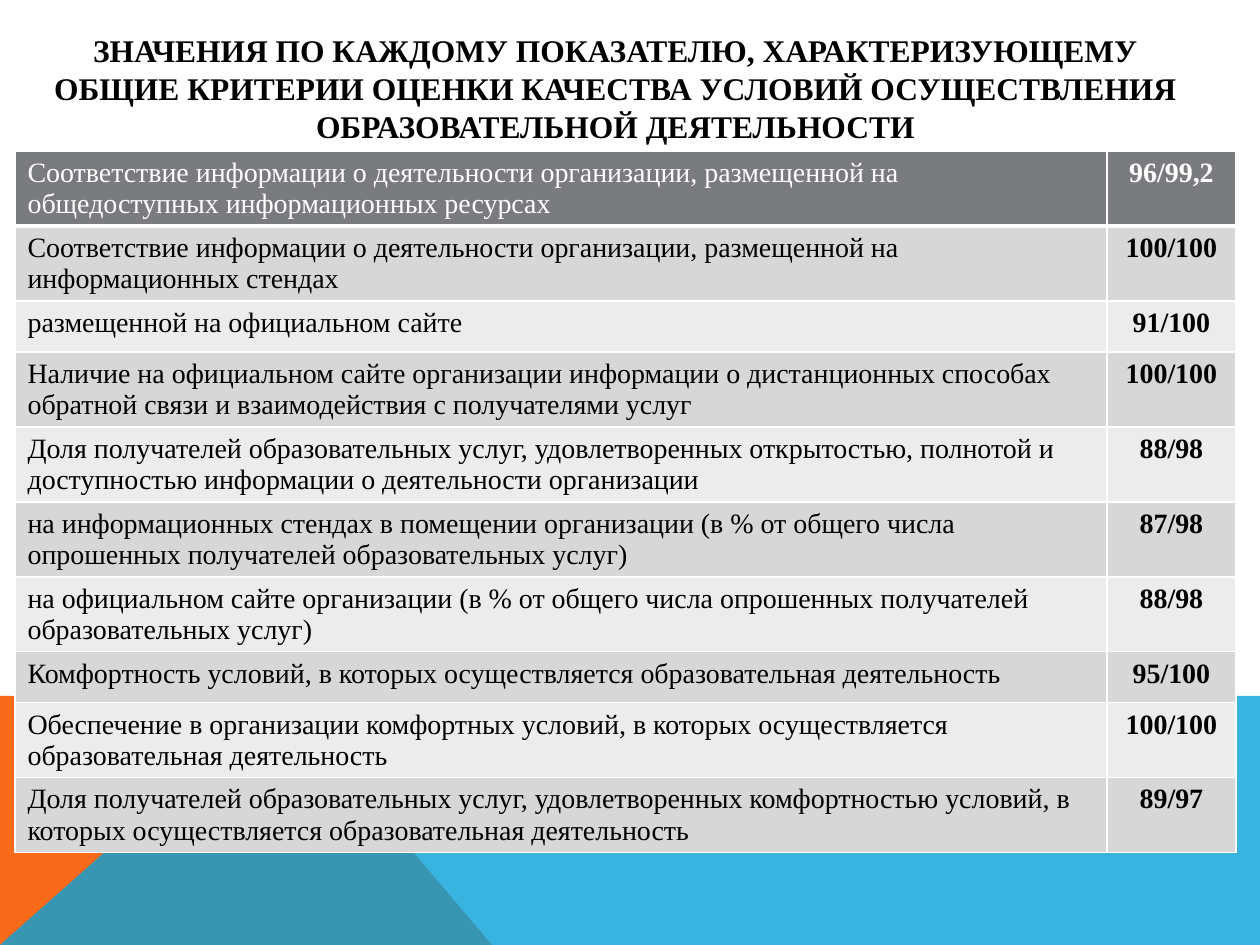
from lxml import etree
from pptx import Presentation
from pptx.dml.color import RGBColor
from pptx.enum.text import MSO_ANCHOR, PP_ALIGN
from pptx.oxml.ns import qn
from pptx.util import Emu, Pt

CENTER, LEFT = PP_ALIGN.CENTER, PP_ALIGN.LEFT
MIDDLE = MSO_ANCHOR.MIDDLE
PX = 914400 / 126
FONT = "Times New Roman"


def px(n):
    return Emu(round(n * PX))


def rgb(value):
    return RGBColor.from_string(value)


prs = Presentation()
prs.slide_width, prs.slide_height = px(1260), px(945)
s = prs.slides.add_slide(prs.slide_layouts[6])

# Bottom decoration: orange corner under a translucent blue band
bands = [
    ("F96A1B", 100, [(0, 945), (0, 696), (281, 696), (492, 945)]),
    ("08A1D9", 80, [(0, 945), (281, 696), (1260, 696), (1260, 945)]),
]
for color, opacity, points in bands:
    builder = s.shapes.build_freeform(*points[0], scale=PX)
    builder.add_line_segments(points[1:], close=True)
    sp = builder.convert_to_shape()
    sp.shadow.inherit = False
    sp.line.fill.background()
    sp.fill.solid()
    sp.fill.fore_color.rgb = rgb(color)
    if opacity < 100:
        clr = sp.fill._xPr.find(".//" + qn("a:srgbClr"))
        etree.SubElement(clr, qn("a:alpha"), val=str(opacity * 1000))

# Title
sp = s.shapes.add_textbox(px(25), px(50), px(1181), px(76))
tf = sp.text_frame
tf.word_wrap = True
tf.vertical_anchor = MIDDLE
tf.text = ("ЗНАЧЕНИЯ ПО КАЖДОМУ ПОКАЗАТЕЛЮ, ХАРАКТЕРИЗУЮЩЕМУ ОБЩИЕ КРИТЕРИИ "
           "ОЦЕНКИ КАЧЕСТВА УСЛОВИЙ ОСУЩЕСТВЛЕНИЯ ОБРАЗОВАТЕЛЬНОЙ ДЕЯТЕЛЬНОСТИ")
p = tf.paragraphs[0]
p.alignment = CENTER
font = p.runs[0].font
font.name, font.size, font.bold = FONT, Pt(18), True
font.color.rgb = rgb("000000")

# Table of indicators: text, value, row height
TALL, SHORT = 75, 51
rows = [
    ("Соответствие информации о деятельности организации, размещенной на "
     "общедоступных информационных ресурсах", "96/99,2", TALL),
    ("Соответствие информации о деятельности организации, размещенной на "
     "информационных стендах", "100/100", TALL),
    ("размещенной на официальном сайте", "91/100", SHORT),
    ("Наличие на официальном сайте организации информации о дистанционных "
     "способах обратной связи и взаимодействия с получателями услуг", "100/100", TALL),
    ("Доля получателей образовательных услуг, удовлетворенных открытостью, "
     "полнотой и доступностью информации о деятельности организации", "88/98", TALL),
    ("на информационных стендах в помещении организации (в % от общего числа "
     "опрошенных получателей образовательных услуг)", "87/98", TALL),
    ("на официальном сайте организации (в % от общего числа опрошенных "
     "получателей образовательных услуг)", "88/98", TALL),
    ("Комфортность условий, в которых осуществляется образовательная "
     "деятельность", "95/100", SHORT),
    ("Обеспечение в организации комфортных условий, в которых осуществляется "
     "образовательная деятельность", "100/100", TALL),
    ("Доля получателей образовательных услуг, удовлетворенных комфортностью "
     "условий, в которых осуществляется образовательная деятельность", "89/97", TALL),
]
height = sum(row[2] for row in rows)
table = s.shapes.add_table(len(rows), 2, px(15), px(151), px(1221), px(height)).table
table.columns[0].width, table.columns[1].width = px(1092), px(129)

for i, (label, value, row_height) in enumerate(rows):
    table.rows[i].height = px(row_height)
    header = i == 0
    fill = "797B7E" if header else ("D7D7D8" if i % 2 else "ECECEC")
    for j, text in enumerate((label, value)):
        cell = table.cell(i, j)
        cell.margin_bottom = 0
        cell.fill.solid()
        cell.fill.fore_color.rgb = rgb(fill)
        cell.text_frame.text = text
        p = cell.text_frame.paragraphs[0]
        p.alignment = CENTER if j else LEFT
        font = p.runs[0].font
        font.name, font.size, font.bold = FONT, Pt(16), j == 1
        font.color.rgb = rgb("FFFFFF" if header else "000000")

        # White borders, thicker between the header and the body
        tc_pr = cell._tc.get_or_add_tcPr()
        for k, side in enumerate("LRTB"):
            thick = (header and side == "B") or (i == 1 and side == "T")
            ln = etree.Element(qn("a:ln" + side), w=str(Pt(3 if thick else 1)))
            solid = etree.SubElement(ln, qn("a:solidFill"))
            etree.SubElement(solid, qn("a:srgbClr"), val="FFFFFF")
            tc_pr.insert(k, ln)

prs.save("out.pptx")
